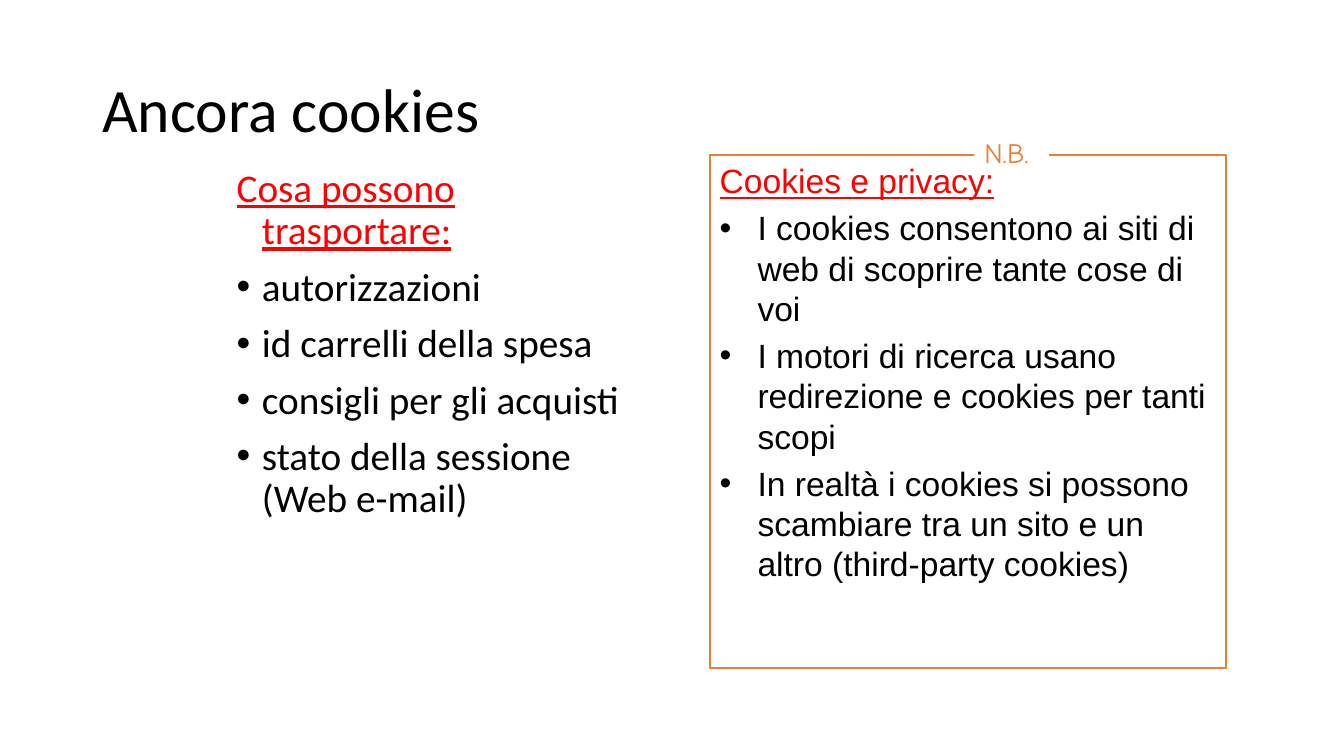
from dataclasses import dataclass

from lxml.etree import SubElement
from pptx import Presentation
from pptx.dml.color import RGBColor
from pptx.enum.shapes import MSO_SHAPE as Preset
from pptx.enum.text import MSO_ANCHOR as Anchor, PP_ALIGN as Align
from pptx.oxml.ns import qn
from pptx.util import Pt

PX = 9525  # EMU per px, 96 px to the inch


@dataclass(frozen=True)
class Theme:
    ink: RGBColor = RGBColor(0x00, 0x00, 0x00)
    heading: RGBColor = RGBColor(0xFF, 0x00, 0x00)
    accent: RGBColor = RGBColor(0xED, 0x7D, 0x31)
    paper: RGBColor = RGBColor(0xFF, 0xFF, 0xFF)
    body_font: str = "Calibri"
    note_font: str = "Arial"
    label_font: str = "Comic Neue"
    title_size: int = 44
    body_size: int = 28
    note_size: int = 24
    label_size: int = 20
    line_width: float = 1.5


THEME = Theme()


def emu(box):
    return [length * PX for length in box]


def add_run(paragraph, text, font, size, color, underline=None):
    run = paragraph.add_run()
    run.text = text
    run.font.name = font
    run.font.size = Pt(size)
    run.font.color.rgb = color
    run.font.underline = underline


def add_text_box(slide, box, anchor=Anchor.TOP):
    frame = slide.shapes.add_textbox(*emu(box)).text_frame
    frame.word_wrap = True
    frame.vertical_anchor = anchor
    return frame


def add_rectangle(slide, box):
    shape = slide.shapes.add_shape(Preset.RECTANGLE, *emu(box))
    shape.shadow.inherit = False
    frame = shape.text_frame
    frame.word_wrap = True
    frame.vertical_anchor = Anchor.TOP
    return shape


def fill_list(frame, heading, items, font, size, indent, space_before, line_spacing):
    """Write an underlined heading, then bullets with the same hanging indent."""
    for index, text in enumerate([heading, *items]):
        is_heading = index == 0
        paragraph = frame.paragraphs[0] if is_heading else frame.add_paragraph()
        paragraph.alignment = Align.LEFT
        paragraph.line_spacing = line_spacing
        paragraph.space_before = Pt(space_before)
        properties = paragraph._p.get_or_add_pPr()
        properties.set("marL", str(indent * PX))
        properties.set("indent", str(-indent * PX))
        if is_heading:
            SubElement(properties, qn("a:buNone"))
        else:
            SubElement(properties, qn("a:buFont"), typeface="Arial")
            SubElement(properties, qn("a:buChar"), char="•")
        color = THEME.heading if is_heading else THEME.ink
        add_run(paragraph, text, font, size, color, is_heading)


def add_title(slide, box, text):
    paragraph = add_text_box(slide, box, Anchor.MIDDLE).paragraphs[0]
    paragraph.line_spacing = 0.9
    add_run(paragraph, text, THEME.body_font, THEME.title_size, THEME.ink)


def add_contents(slide, box, heading, items):
    fill_list(add_text_box(slide, box), heading, items, THEME.body_font,
              THEME.body_size, indent=24, space_before=10, line_spacing=0.9)


def add_note(slide, box, label, heading, items):
    # Outlined frame with its list
    frame = add_rectangle(slide, box)
    frame.fill.background()
    frame.line.color.rgb = THEME.accent
    frame.line.width = Pt(THEME.line_width)
    fill_list(frame.text_frame, heading, items, THEME.note_font,
              THEME.note_size, indent=36, space_before=4.8, line_spacing=1.0)

    # Label that interrupts the top edge
    left, top, _, _ = box
    tag = add_rectangle(slide, (left + 252, top - 24, 71, 41))
    tag.fill.solid()
    tag.fill.fore_color.rgb = THEME.paper
    tag.line.fill.background()
    paragraph = tag.text_frame.paragraphs[0]
    paragraph.alignment = Align.LEFT
    add_run(paragraph, label, THEME.label_font, THEME.label_size, THEME.accent)


def main():
    presentation = Presentation()
    presentation.slide_width, presentation.slide_height = emu((1280, 720))
    slide = presentation.slides.add_slide(presentation.slide_layouts[6])

    add_title(slide, (88, 38, 1104, 139), "Ancora cookies")
    add_contents(slide, (216, 156, 400, 488), "Cosa possono trasportare:", [
        "autorizzazioni",
        "id carrelli della spesa",
        "consigli per gli acquisti",
        "stato della sessione (Web e-mail)",
    ])
    add_note(slide, (676, 148, 492, 488), "N.B.", "Cookies e privacy:", [
        "I cookies consentono ai siti di web di scoprire tante cose di voi",
        "I motori di ricerca usano redirezione e cookies per tanti scopi",
        "In realtà i cookies si possono scambiare tra un sito e un altro "
        "(third-party cookies)",
    ])

    presentation.save("out.pptx")


if __name__ == "__main__":
    main()
